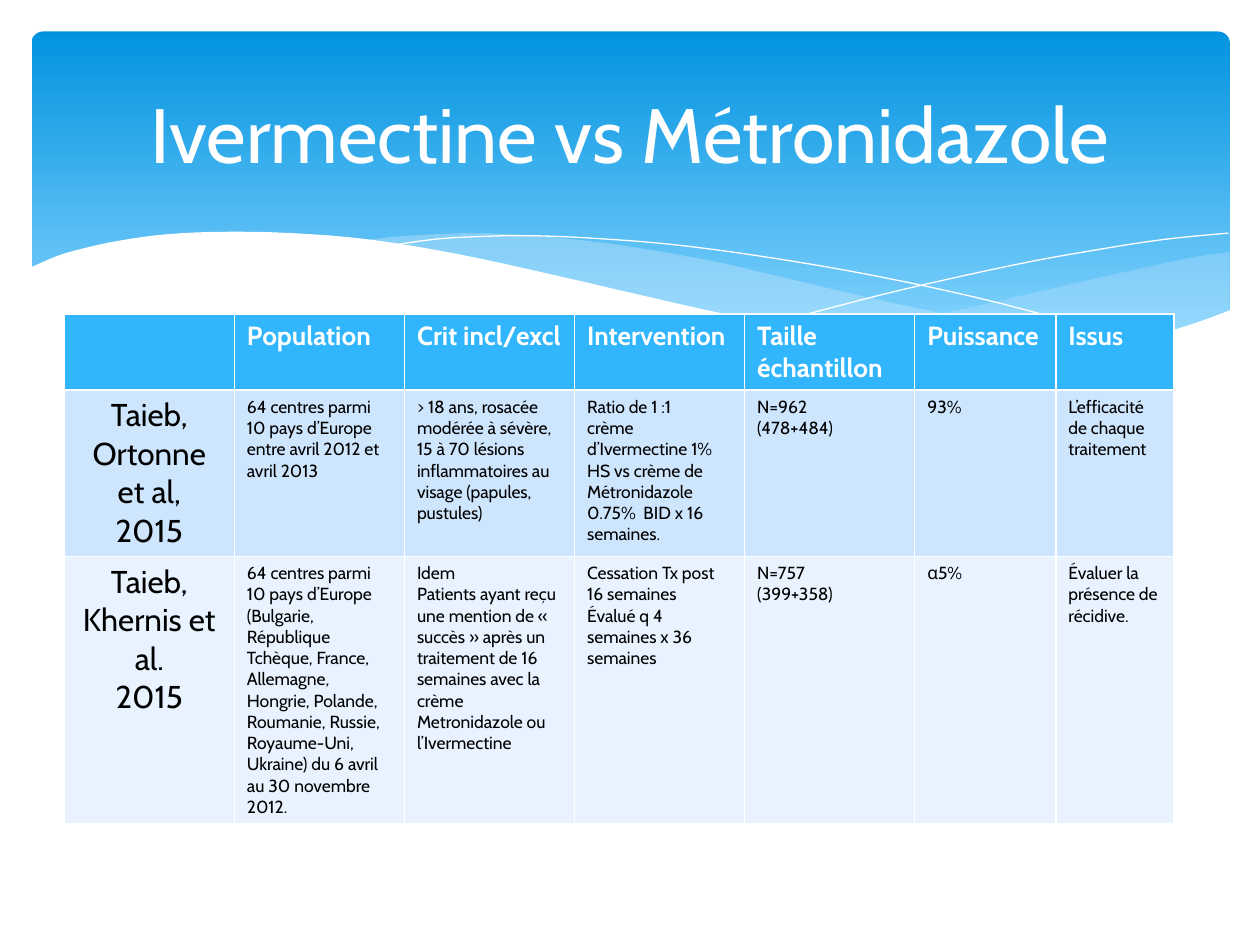
from dataclasses import dataclass
from typing import Optional

from lxml import etree
from pptx import Presentation, util as u
from pptx.dml.color import RGBColor
from pptx.enum import shapes, text
from pptx.oxml.ns import qn

Point = tuple[float, float]


@dataclass(frozen=True)
class Theme:
    font: str = "Cabin"
    white: str = "FFFFFF"
    black: str = "000000"
    sky_top: str = "0293E0"
    sky_bottom: str = "83D3FE"
    wave: str = "C6E7FC"
    header: str = "31B6FD"
    bands: tuple[str, str] = ("CEE5FE", "E8F3FF")
    title_size: int = 44
    header_size: int = 15
    study_size: int = 18
    detail_size: int = 10


@dataclass(frozen=True)
class Wave:
    """Smooth edges joined end to end; filled, or outlined when fill is None."""
    edges: list[list[Point]]
    fill: Optional[str] = None
    opacity: int = 100


THEME = Theme()

WAVES = [
    # Pale wave at the right edge
    Wave([[(9.76, 2), (9.48, 2.04), (9.06, 2.13), (8.61, 2.23), (7.79, 2.42), (7.06, 2.57), (6.61, 2.65)],
          [(6.61, 2.65), (7.05, 2.71), (7.57, 2.76), (8.03, 2.78), (8.44, 2.77), (8.81, 2.73),
           (9.21, 2.65), (9.49, 2.57), (9.76, 2.47)]], THEME.wave, 29),
    # Pale wave in the centre
    Wave([[(8.93, 2.73), (8.37, 2.65), (7.75, 2.54), (7.06, 2.4), (6.29, 2.22), (5.69, 2.08), (5.14, 1.98),
           (4.65, 1.91), (4.2, 1.87), (3.8, 1.85), (3.44, 1.86), (3.13, 1.88), (2.86, 1.91)],
          [(2.86, 1.91), (3.42, 1.99), (4.04, 2.11), (4.49, 2.22), (5.3, 2.4), (6.01, 2.55), (6.65, 2.66),
           (7.22, 2.74), (7.73, 2.77), (8.18, 2.78), (8.57, 2.77), (8.93, 2.73)]], THEME.wave, 40),
    # Two thin crossing lines
    Wave([[(3.09, 1.95), (3.44, 1.9), (3.74, 1.88), (4.16, 1.87), (4.69, 1.89), (5.33, 1.94),
           (6.08, 2.04), (6.95, 2.19), (7.95, 2.41), (9.07, 2.72)]]),
    Wave([[(6.13, 2.57), (6.53, 2.46), (7.2, 2.29), (8.06, 2.1), (8.66, 1.99), (9.24, 1.9), (9.75, 1.85)]]),
    # White foreground wave
    Wave([[(9.77, 2.46), (9.5, 2.56), (9.2, 2.65), (8.87, 2.71), (8.5, 2.75), (8.09, 2.77), (7.61, 2.75),
           (7.08, 2.7), (6.48, 2.62), (5.79, 2.5), (5.03, 2.33), (4.47, 2.2), (3.65, 2.02), (2.92, 1.9),
           (2.3, 1.85), (1.77, 1.84), (1.32, 1.86), (0.95, 1.91), (0.67, 1.97), (0.46, 2.03), (0.23, 2.13)],
          [(0.23, 3.29), (9.77, 3.29)]], THEME.white),
]

COLUMN_WIDTHS = [1.35] * 5 + [1.12, 0.94]
ROW_HEIGHTS = [0.54, 1.29, 2.12]
TABLE_HEIGHT = 4.27
STUDIES = [
    ["", "Population", "Crit incl/excl", "Intervention", "Taille échantillon", "Puissance", "Issus"],
    ["Taieb, Ortonne et al,\n2015",
     "64 centres parmi 10 pays d’Europe entre avril 2012 et avril 2013",
     "> 18 ans, rosacée modérée à sévère, 15 à 70 lésions inflammatoires au visage (papules, pustules)",
     "Ratio de 1 :1\ncrème d’Ivermectine 1%  HS vs crème de Métronidazole 0.75%  BID x 16 semaines.",
     "N=962\n(478+484)", "93%", "L’efficacité de chaque traitement"],
    ["Taieb, Khernis et al.\n2015",
     "64 centres parmi 10 pays d’Europe (Bulgarie, République Tchèque, France, Allemagne, Hongrie, "
     "Polande, Roumanie, Russie, Royaume-Uni, Ukraine) du 6 avril au 30 novembre 2012.",
     "Idem\nPatients ayant reçu une mention de « succès » après un traitement de 16 semaines "
     "avec la crème Metronidazole ou l’Ivermectine",
     "Cessation Tx post 16 semaines\nÉvalué q 4 semaines x 36 semaines",
     "N=757\n(399+358)", "α5%", "Évaluer la présence de récidive."],
]


def rgb(color: str) -> RGBColor:
    return RGBColor.from_string(color)


def write_text(frame, content: str, *, size: int, color: str, bold: bool = False,
               align=text.PP_ALIGN.LEFT) -> None:
    frame.text = content
    for paragraph in frame.paragraphs:
        paragraph.alignment = align
        font = paragraph.font
        for run in paragraph.runs:
            font = run.font
        font.name, font.size, font.bold = THEME.font, u.Pt(size), bold
        font.color.rgb = rgb(color)


def smooth(edge: list[Point], steps: int = 4) -> list[Point]:
    """Catmull-Rom curve through the points of an edge."""
    if len(edge) < 3:
        return edge
    padded = [edge[0], *edge, edge[-1]]
    curve = []
    for a, b, c, d in zip(padded, padded[1:], padded[2:], padded[3:]):
        for t in (step / steps for step in range(steps)):
            curve.append(tuple(
                0.5 * (2 * q + (r - p) * t + (2 * p - 5 * q + 4 * r - s) * t ** 2
                       + (3 * q - p - 3 * r + s) * t ** 3)
                for p, q, r, s in zip(a, b, c, d)))
    return curve + [edge[-1]]


def draw_wave(slide, wave: Wave) -> None:
    points = [(u.Inches(x), u.Inches(y)) for edge in wave.edges for x, y in smooth(edge)]
    builder = slide.shapes.build_freeform(*points[0])
    builder.add_line_segments(points[1:], close=wave.fill is not None)
    ribbon = builder.convert_to_shape()
    ribbon.shadow.inherit = False
    if wave.fill is None:
        ribbon.fill.background()
        ribbon.line.color.rgb = rgb(THEME.white)
        ribbon.line.width = u.Pt(0)
        return
    ribbon.line.fill.background()
    ribbon.fill.solid()
    ribbon.fill.fore_color.rgb = rgb(wave.fill)
    if wave.opacity < 100:
        color = next(ribbon._element.spPr.iter(qn("a:srgbClr")))
        etree.SubElement(color, qn("a:alpha")).set("val", str(wave.opacity * 1000))


def draw_sky(slide) -> None:
    sky = slide.shapes.add_shape(shapes.MSO_SHAPE.ROUNDED_RECTANGLE, u.Inches(0.25), u.Inches(0.25),
                                 u.Inches(9.51), u.Inches(2.7))
    sky.adjustments[0] = 0.034
    sky.shadow.inherit = False
    sky.line.fill.background()
    sky.fill.gradient()
    sky.fill.gradient_angle = 270
    stops = ((0, THEME.sky_top), (0.9, THEME.sky_bottom))
    for stop, (position, color) in zip(sky.fill.gradient_stops, stops):
        stop.position = position
        stop.color.rgb = rgb(color)


def draw_studies(slide) -> None:
    frame = slide.shapes.add_table(len(STUDIES), len(COLUMN_WIDTHS), u.Inches(0.51), u.Inches(2.49),
                                   u.Inches(sum(COLUMN_WIDTHS)), u.Inches(TABLE_HEIGHT))
    table = frame.table
    for column, width in zip(table.columns, COLUMN_WIDTHS):
        column.width = u.Inches(width)
    for row, height in zip(table.rows, ROW_HEIGHTS):
        row.height = u.Inches(height)
    frame.height = u.Inches(TABLE_HEIGHT)

    for r, (study, fill) in enumerate(zip(STUDIES, (THEME.header, *THEME.bands))):
        for c, content in enumerate(study):
            cell = table.cell(r, c)
            cell.fill.solid()
            cell.fill.fore_color.rgb = rgb(fill)
            if r == 0:
                look = dict(size=THEME.header_size, color=THEME.white, bold=True)
            elif c == 0:
                look = dict(size=THEME.study_size, color=THEME.black, align=text.PP_ALIGN.CENTER)
            else:
                look = dict(size=THEME.detail_size, color=THEME.black)
            write_text(cell.text_frame, content, **look)


def main() -> None:
    deck = Presentation()
    deck.slide_width, deck.slide_height = u.Inches(10), u.Inches(7.5)
    slide = deck.slides.add_slide(deck.slide_layouts[5])

    # Banner
    draw_sky(slide)
    for wave in WAVES:
        draw_wave(slide, wave)

    # Title, in front of the banner
    title = slide.shapes.title
    slide.shapes._spTree.append(title._element)
    title.left, title.top = u.Inches(0.5), u.Inches(0.37)
    title.width, title.height = u.Inches(9), u.Inches(1.37)
    title.text_frame.vertical_anchor = text.MSO_ANCHOR.MIDDLE
    write_text(title.text_frame, "Ivermectine vs Métronidazole", size=THEME.title_size,
               color=THEME.white, align=text.PP_ALIGN.CENTER)

    # Study comparison
    draw_studies(slide)
    deck.save("out.pptx")


if __name__ == "__main__":
    main()
